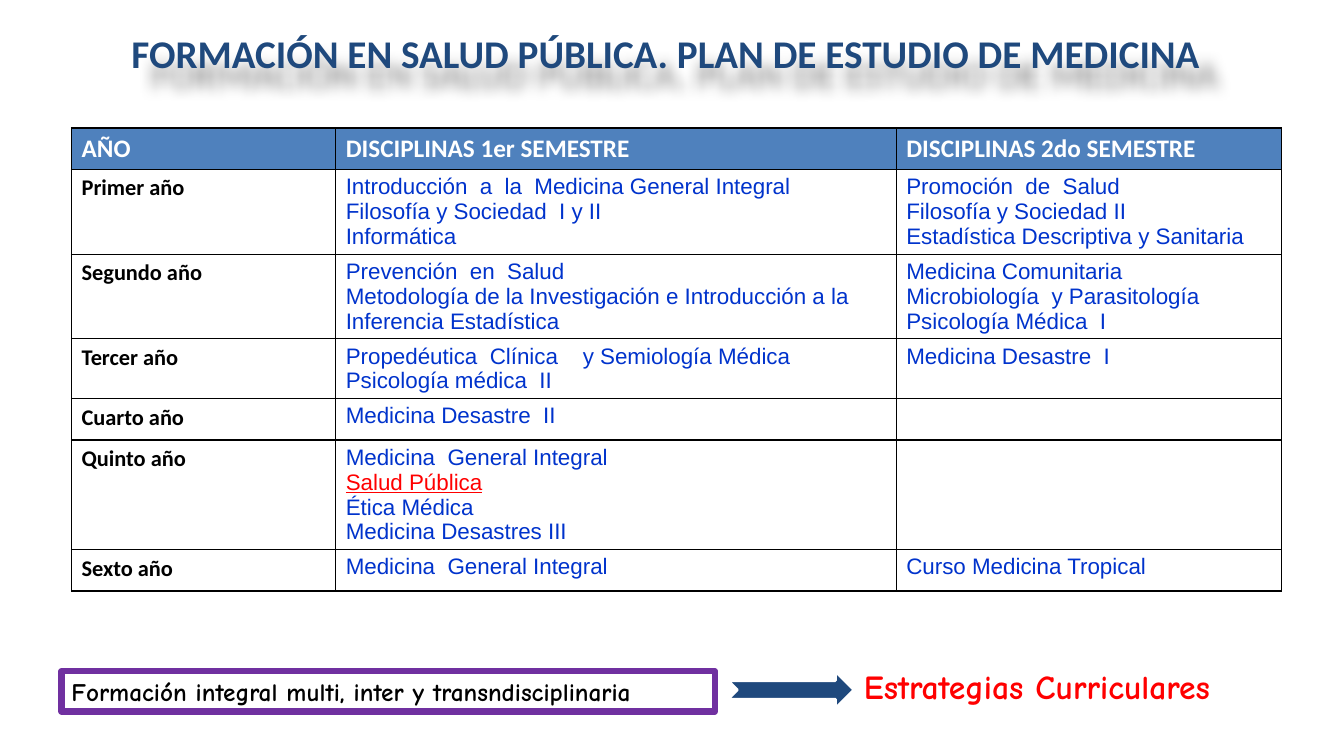
from dataclasses import dataclass
from typing import Any

from lxml.etree import SubElement
from pptx import Presentation
from pptx.dml.color import RGBColor
from pptx.enum.shapes import MSO_SHAPE as Shape
from pptx.enum.text import MSO_ANCHOR as Anchor, PP_ALIGN as Align
from pptx.oxml import parse_xml
from pptx.oxml.ns import nsdecls, qn
from pptx.util import Inches, Pt

NAVY, BLUE, RED = "1F497D", "0033CC", "FF0000"
BLACK, WHITE, HEADER_BLUE, PURPLE = "000000", "FFFFFF", "4F81BD", "7030A0"


@dataclass(frozen=True)
class TextStyle:
    font: str
    size: float
    color: str
    bold: bool = False
    underline: bool = False


@dataclass(frozen=True)
class Year:
    name: str
    first: tuple[str, ...]
    second: tuple[str, ...] = ()


TITLE = TextStyle("Calibri", 28, NAVY, bold=True)
HEADER = TextStyle("Calibri", 18, WHITE, bold=True)
YEAR_NAME = TextStyle("Calibri", 16, BLACK, bold=True)
SUBJECT = TextStyle("Arial", 16, BLUE)
KEY_SUBJECT = TextStyle("Arial", 16, RED, underline=True)
TRAINING = TextStyle("Comic Neue", 18, BLACK, bold=True)
STRATEGIES = TextStyle("Comic Neue", 24, RED, bold=True)

KEY_NAME = "Salud Pública"
HEADINGS = ("AÑO", "DISCIPLINAS 1er SEMESTRE", "DISCIPLINAS 2do SEMESTRE")
COLUMN_WIDTHS = (2.62, 5.56, 3.82)
ROW_HEIGHT = 0.41
YEARS = (
    Year("Primer año",
         ("Introducción  a  la  Medicina General Integral",
          "Filosofía y Sociedad  I y II", "Informática"),
         ("Promoción  de  Salud", "Filosofía y Sociedad II",
          "Estadística Descriptiva y Sanitaria")),
    Year("Segundo año",
         ("Prevención  en  Salud",
          "Metodología de la Investigación e Introducción a la Inferencia Estadística"),
         ("Medicina Comunitaria", "Microbiología  y Parasitología",
          "Psicología Médica  I")),
    Year("Tercer año",
         ("Propedéutica  Clínica    y Semiología Médica", "Psicología médica  II"),
         ("Medicina Desastre  I",)),
    Year("Cuarto año", ("Medicina Desastre  II",)),
    Year("Quinto año",
         ("Medicina  General Integral", KEY_NAME, "Ética Médica",
          "Medicina Desastres III")),
    Year("Sexto año", ("Medicina  General Integral",), ("Curso Medicina Tropical",)),
)


def set_color(color_format: Any, value: str) -> None:
    color_format.rgb = RGBColor.from_string(value)


def set_fill(fill: Any, value: str) -> None:
    fill.solid()
    set_color(fill.fore_color, value)


def write_paragraph(paragraph: Any, text: str, style: TextStyle,
                    align: Align = Align.LEFT) -> None:
    paragraph.alignment = align
    run = paragraph.add_run()
    run.text = text
    formats = {"name": style.font, "size": Pt(style.size),
               "bold": style.bold, "underline": style.underline}
    for attribute, value in formats.items():
        setattr(run.font, attribute, value)
    set_color(run.font.color, style.color)


def place(shape: Any, left: float, top: float, width: float, height: float) -> None:
    bounds = {"left": left, "top": top, "width": width, "height": height}
    for attribute, value in bounds.items():
        setattr(shape, attribute, Inches(value))


def add_borders(cell: Any) -> None:
    properties = cell._tc.get_or_add_tcPr()
    for index, side in enumerate(("lnL", "lnR", "lnT", "lnB")):
        properties.insert(index, parse_xml(
            f'<a:{side} {nsdecls("a")} w="{Pt(1)}"><a:solidFill>'
            f'<a:srgbClr val="{BLACK}"/></a:solidFill></a:{side}>'))


def write_cell(cell: Any, lines: tuple[str, ...], style: TextStyle, fill: str) -> None:
    set_fill(cell.fill, fill)
    add_borders(cell)
    frame = cell.text_frame
    for index, line in enumerate(lines):
        paragraph = frame.add_paragraph() if index else frame.paragraphs[0]
        write_paragraph(paragraph, line, KEY_SUBJECT if line == KEY_NAME else style)


def add_title(slide: Any) -> None:
    title = slide.shapes.title
    place(title, 0.93, 0.2, 11.34, 0.65)
    title.text_frame.vertical_anchor = Anchor.MIDDLE
    write_paragraph(title.text_frame.paragraphs[0],
                    "FORMACIÓN EN SALUD PÚBLICA. PLAN DE ESTUDIO DE MEDICINA",
                    TITLE, Align.CENTER)
    effects = SubElement(title._element.spPr, qn("a:effectLst"))
    effects.append(parse_xml(
        f'<a:outerShdw {nsdecls("a")} blurRad="{Inches(0.14)}" '
        f'dist="{Inches(0.26)}" dir="2700000" algn="tl">'
        f'<a:srgbClr val="{BLACK}"><a:alpha val="40000"/></a:srgbClr></a:outerShdw>'))


def add_study_plan(slide: Any) -> None:
    frame = slide.shapes.add_table(
        len(YEARS) + 1, len(HEADINGS), Inches(0.71), Inches(1.27),
        Inches(sum(COLUMN_WIDTHS)), Inches(4.82))
    table = frame.table
    table.horz_banding = False
    for column, width in zip(table.columns, COLUMN_WIDTHS):
        column.width = Inches(width)
    for row in table.rows:
        row.height = Inches(ROW_HEIGHT)
    for column, heading in enumerate(HEADINGS):
        write_cell(table.cell(0, column), (heading,), HEADER, HEADER_BLUE)
    for row, year in enumerate(YEARS, start=1):
        write_cell(table.cell(row, 0), (year.name,), YEAR_NAME, WHITE)
        write_cell(table.cell(row, 1), year.first, SUBJECT, WHITE)
        write_cell(table.cell(row, 2), year.second, SUBJECT, WHITE)
    frame.height = Inches(4.82)


def add_outlined(slide: Any, kind: Shape, bounds: tuple[float, ...],
                 line_color: str, line_width: float) -> Any:
    shape = slide.shapes.add_shape(kind, *map(Inches, bounds))
    shape.shadow.inherit = False
    set_color(shape.line.color, line_color)
    shape.line.width = Pt(line_width)
    return shape


def add_conclusion(slide: Any) -> None:
    strategies = slide.shapes.add_textbox(*map(Inches, (8.47, 6.56, 4.24, 0.5)))
    strategies.text_frame.word_wrap = True
    write_paragraph(strategies.text_frame.paragraphs[0],
                    "Estrategias Curriculares", STRATEGIES)

    arrow = add_outlined(slide, Shape.NOTCHED_RIGHT_ARROW,
                         (7.22, 6.66, 1.25, 0.37), WHITE, 2)
    set_fill(arrow.fill, NAVY)

    training = add_outlined(slide, Shape.RECTANGLE,
                            (0.61, 6.66, 6.48, 0.4), PURPLE, 4.5)
    training.fill.background()
    training.text_frame.word_wrap = True
    training.text_frame.vertical_anchor = Anchor.MIDDLE
    write_paragraph(training.text_frame.paragraphs[0],
                    "Formación integral multi, inter y transndisciplinaria", TRAINING)


def main() -> None:
    presentation = Presentation()
    presentation.slide_width = Inches(13.33)
    presentation.slide_height = Inches(7.5)
    slide = presentation.slides.add_slide(presentation.slide_layouts[5])
    add_study_plan(slide)
    add_title(slide)
    add_conclusion(slide)
    presentation.save("out.pptx")


if __name__ == "__main__":
    main()
